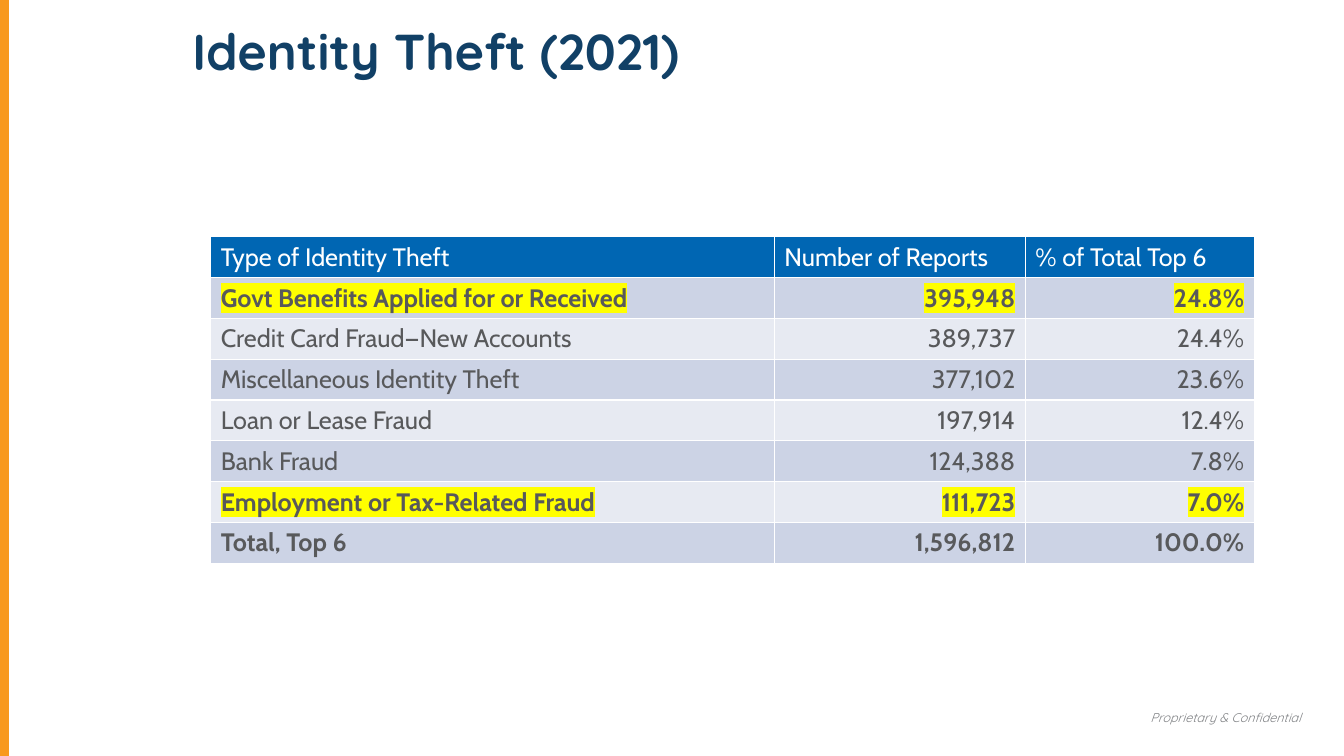
from lxml import etree
from pptx import Presentation
from pptx.dml.color import RGBColor
from pptx.enum.shapes import MSO_CONNECTOR
from pptx.enum.text import MSO_ANCHOR, PP_ALIGN
from pptx.oxml.ns import qn
from pptx.util import Inches, Pt

TITLE = "Identity Theft (2021)"
FOOTER = "Proprietary & Confidential"
HEADER = ("Type of Identity Theft", "Number of Reports", "% of Total Top 6")
REPORTS = [
    ("Govt Benefits Applied for or Received", "395,948", "24.8%"),
    ("Credit Card Fraud—New Accounts", "389,737", "24.4%"),
    ("Miscellaneous Identity Theft", "377,102", "23.6%"),
    ("Loan or Lease Fraud", "197,914", "12.4%"),
    ("Bank Fraud", "124,388", "7.8%"),
    ("Employment or Tax-Related Fraud", "111,723", "7.0%"),
    ("Total, Top 6", "1,596,812", "100.0%"),
]
HIGHLIGHTED_ROWS = (1, 6)
TOTAL_ROW = len(REPORTS)
COLUMN_WIDTHS = (5.59, 2.49, 2.27)
TABLE_LEFT, TABLE_TOP, TABLE_HEIGHT = 2.09, 2.35, 3.24

WHITE = RGBColor(0xFF, 0xFF, 0xFF)
NAVY = RGBColor(0x11, 0x40, 0x66)
BLUE = RGBColor(0x00, 0x66, 0xB3)
ORANGE = RGBColor(0xF8, 0x99, 0x1D)
DARK_GREY = RGBColor(0x58, 0x59, 0x5B)
GREY = RGBColor(0x80, 0x82, 0x85)
YELLOW = RGBColor(0xFF, 0xFF, 0x00)
BANDS = (RGBColor(0xE7, 0xEA, 0xF2), RGBColor(0xCC, 0xD3, 0xE5))

TITLE_FORMAT = {"name": "Quicksand", "size": Pt(36), "bold": True}
FOOTER_FORMAT = {"name": "Quicksand", "size": Pt(9), "italic": True}


def write(text_frame, text, color, font_format, alignment=PP_ALIGN.LEFT):
    paragraph = text_frame.paragraphs[0]
    paragraph.alignment = alignment
    run = paragraph.add_run()
    run.text = text
    run.font.color.rgb = color
    for attribute, value in font_format.items():
        setattr(run.font, attribute, value)
    return run


def highlight(run, color):
    """Mark the run's background; the schema wants it before the typeface."""
    mark = etree.Element(qn("a:highlight"))
    etree.SubElement(mark, qn("a:srgbClr"), val=str(color))
    run.font._element.find(qn("a:latin")).addprevious(mark)


def add_text(slide, box, text, color, font_format, alignment, frame_format):
    shape = slide.shapes.add_textbox(*map(Inches, box))
    frame = shape.text_frame
    for attribute, value in frame_format.items():
        setattr(frame, attribute, value)
    write(frame, text, color, font_format, alignment)


def add_side_bar(slide, height):
    bar = slide.shapes.add_connector(
        MSO_CONNECTOR.STRAIGHT, Inches(0.03), 0, Inches(0.03), height)
    bar.line.color.rgb = ORANGE
    bar.line.width = Pt(8)
    etree.SubElement(bar._element.spPr, qn("a:effectLst"))


def add_reports_table(slide):
    rows = [HEADER, *REPORTS]
    table = slide.shapes.add_table(
        len(rows), len(HEADER), Inches(TABLE_LEFT), Inches(TABLE_TOP),
        Inches(sum(COLUMN_WIDTHS)), Inches(TABLE_HEIGHT)).table
    for column, width in zip(table.columns, COLUMN_WIDTHS):
        column.width = Inches(width)
    for row_index, values in enumerate(rows):
        is_header = row_index == 0
        is_marked = row_index in HIGHLIGHTED_ROWS
        font_format = {"name": "Cabin", "size": Pt(18),
                       "bold": is_marked or row_index == TOTAL_ROW}
        for column_index, value in enumerate(values):
            cell = table.cell(row_index, column_index)
            cell.fill.solid()
            cell.fill.fore_color.rgb = BLUE if is_header else BANDS[row_index % 2]
            is_number = column_index > 0 and not is_header
            run = write(cell.text_frame, value, WHITE if is_header else DARK_GREY,
                        font_format, PP_ALIGN.RIGHT if is_number else PP_ALIGN.LEFT)
            if is_marked:
                highlight(run, YELLOW)


def main():
    presentation = Presentation()
    presentation.slide_width = Inches(13.33)
    presentation.slide_height = Inches(7.5)
    slide = presentation.slides.add_slide(presentation.slide_layouts[6])
    add_text(slide, (10.97, 6.91, 2.03, 0.48), FOOTER, GREY, FOOTER_FORMAT,
             PP_ALIGN.RIGHT, {"word_wrap": True, "margin_bottom": Inches(0.2),
                              "vertical_anchor": MSO_ANCHOR.BOTTOM})
    add_side_bar(slide, presentation.slide_height)
    add_text(slide, (1.81, 0.15, 11.19, 1), TITLE, NAVY, TITLE_FORMAT,
             PP_ALIGN.LEFT, {"word_wrap": True, "vertical_anchor": MSO_ANCHOR.TOP})
    add_reports_table(slide)
    presentation.save("out.pptx")


if __name__ == "__main__":
    main()
